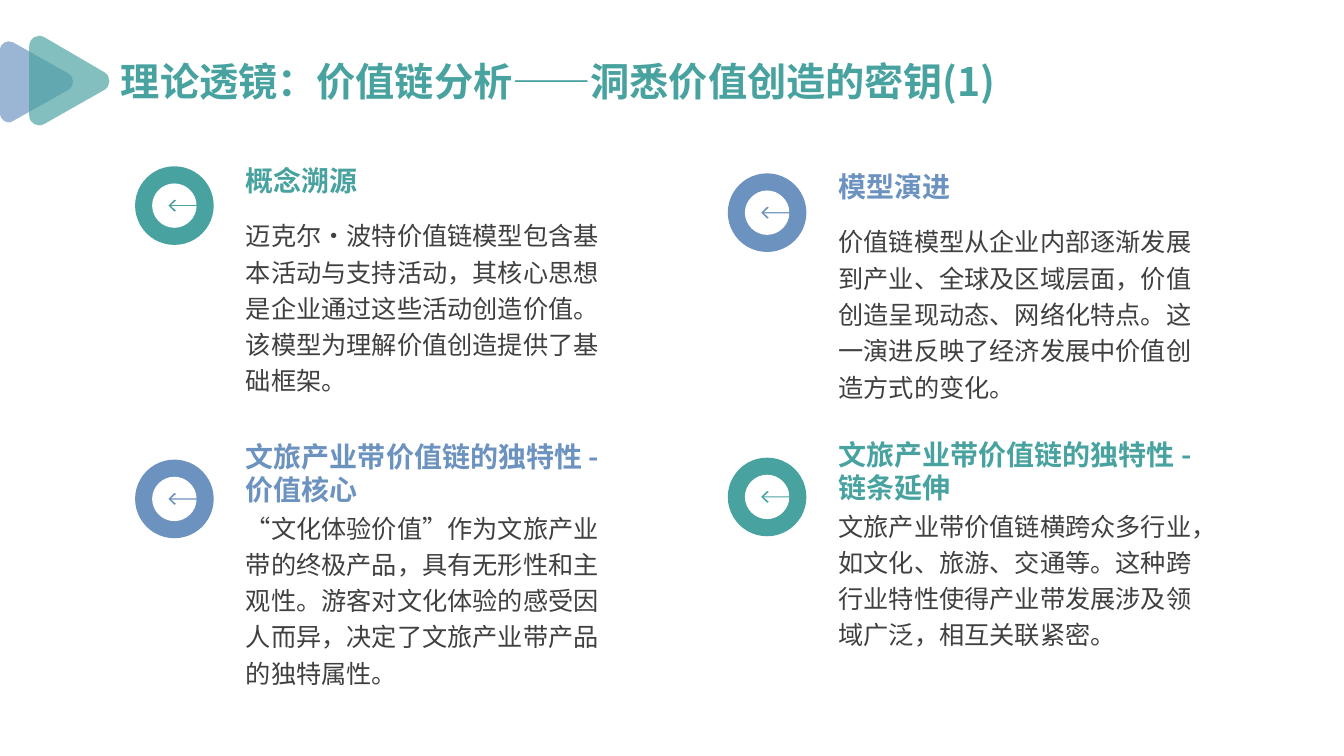
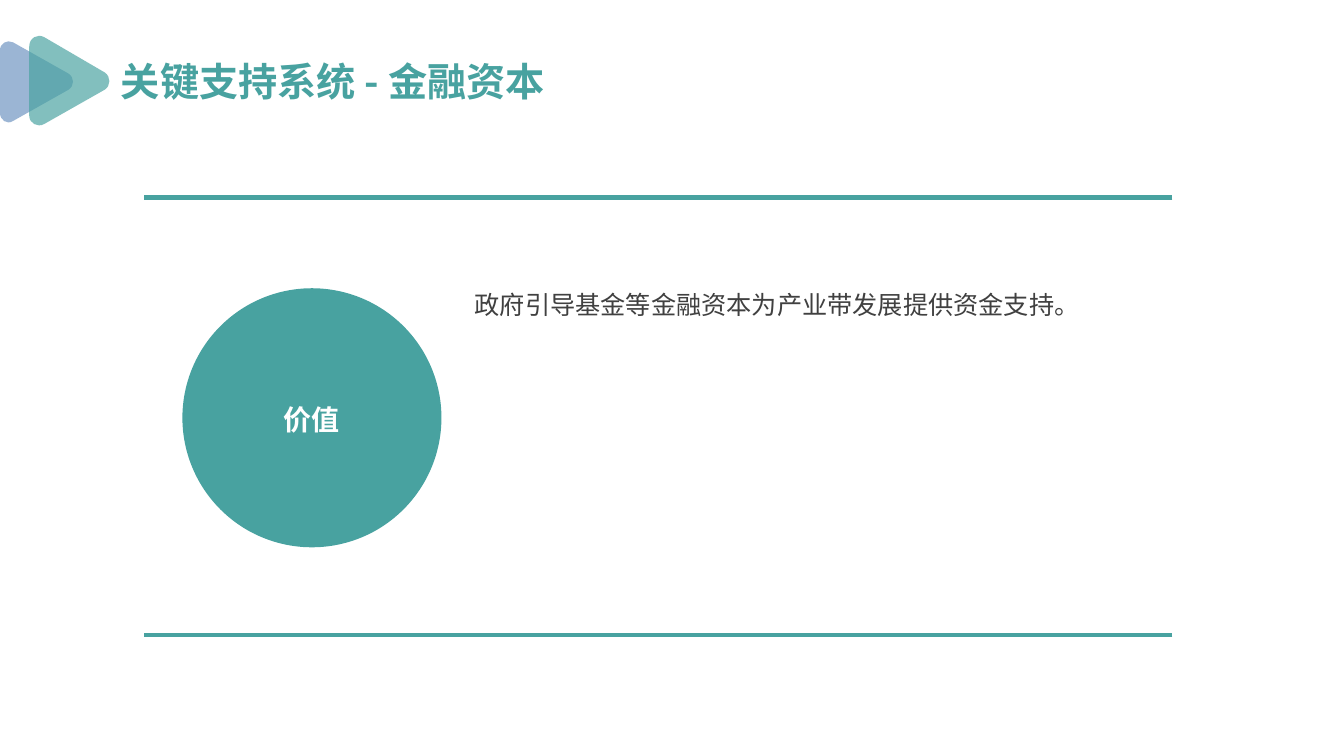
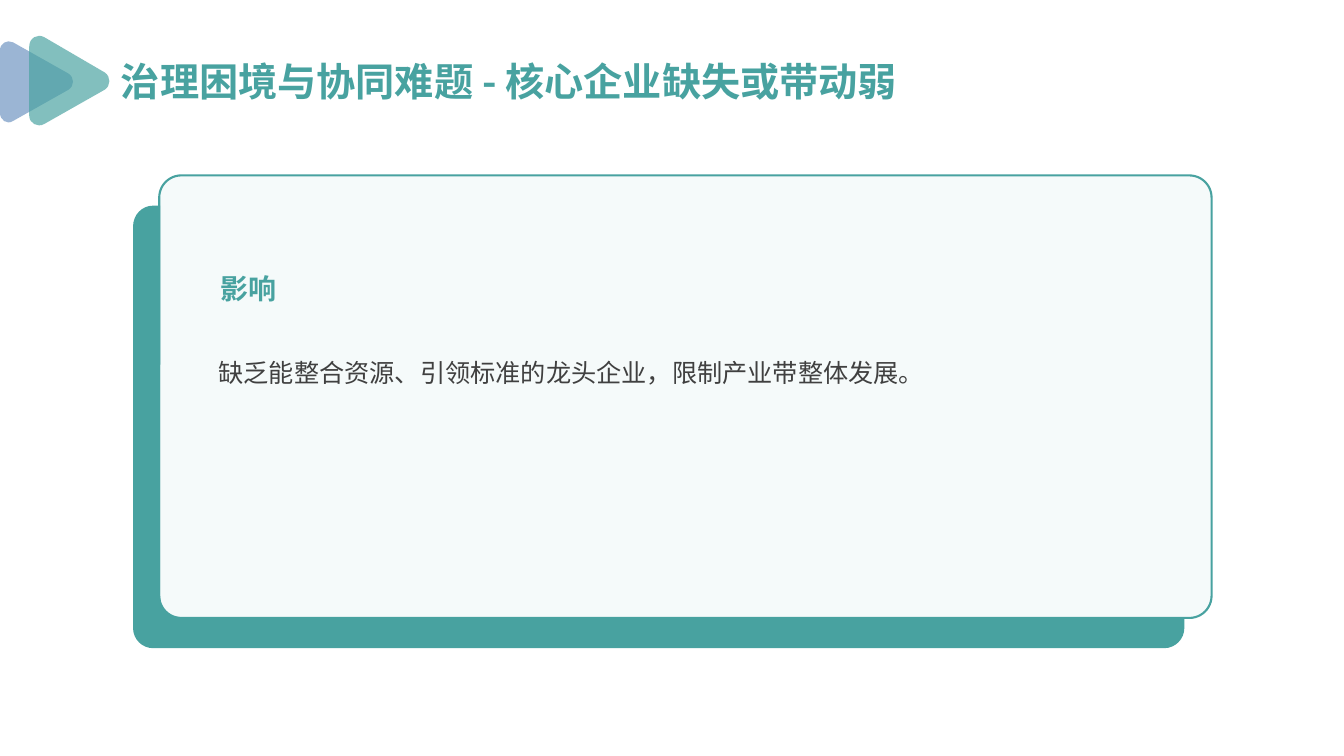
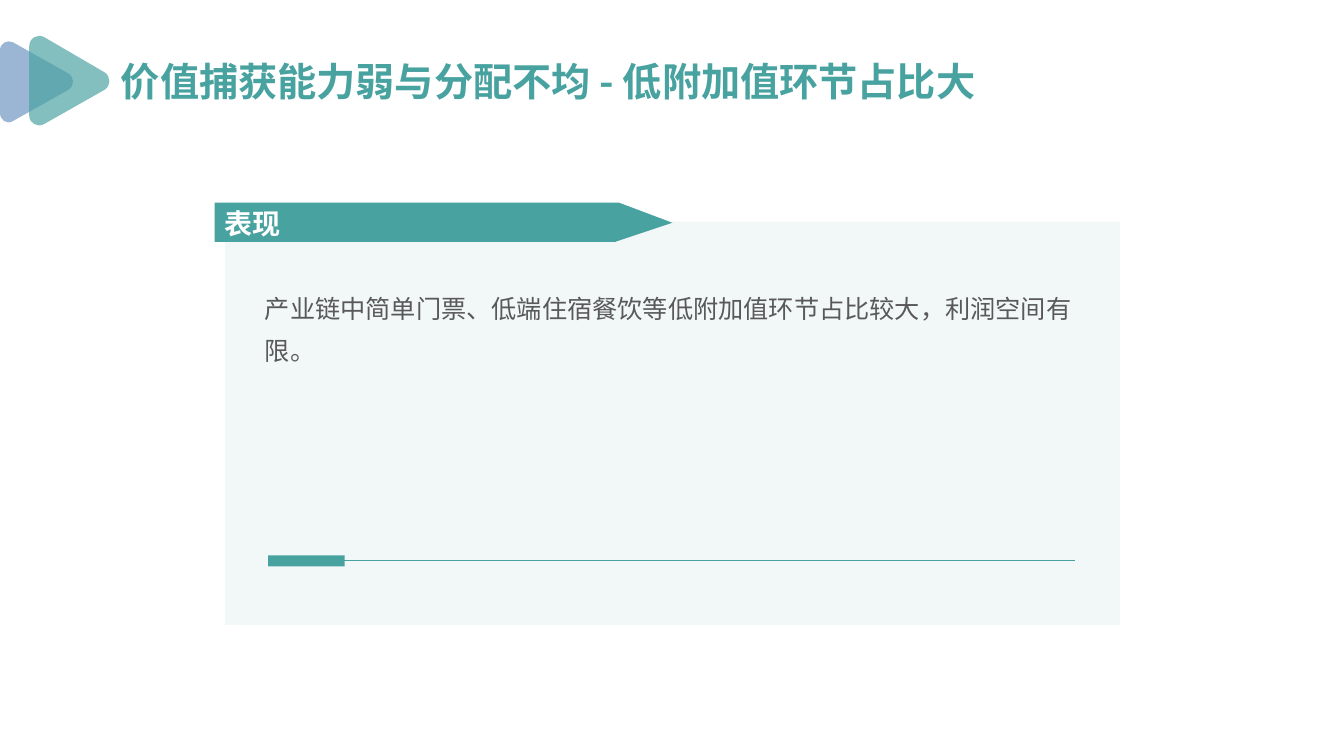
from pptx import Presentation
from pptx import util as u
from pptx.dml.color import RGBColor
from pptx.enum import shapes, text
from pptx.oxml import ns
from lxml import etree

TEAL = RGBColor(0x48, 0xA2, 0xA0)
BLUE = RGBColor(0x6C, 0x92, 0xC0)
WHITE = RGBColor(0xFF, 0xFF, 0xFF)
DARK = RGBColor(0x40, 0x40, 0x40)
GREY = RGBColor(0x59, 0x59, 0x59)
FONT = "Noto Sans CJK SC"
PX = 9144
PAD = (10, 5)

TITLES = [
    "理论透镜：价值链分析——洞悉价值创造的密钥(1)",
    "关键支持系统 - 金融资本",
    "治理困境与协同难题 - 核心企业缺失或带动弱",
    "价值捕获能力弱与分配不均 - 低附加值环节占比大",
]
ITEMS = [
    (134, 165, 159, TEAL, "概念溯源",
     "迈克尔·波特价值链模型包含基本活动与支持活动，其核心思想是企业通过这些活动创造价值。该模型为理解价值创造提供了基础框架。"),
    (722, 172, 165, BLUE, "模型演进",
     "价值链模型从企业内部逐渐发展到产业、全球及区域层面，价值创造呈现动态、网络化特点。这一演进反映了经济发展中价值创造方式的变化。"),
    (134, 456, 449, BLUE, "文旅产业带价值链的独特性 - 价值核心",
     "“文化体验价值”作为文旅产业带的终极产品，具有无形性和主观性。游客对文化体验的感受因人而异，决定了文旅产业带产品的独特属性。"),
    (722, 454, 447, TEAL, "文旅产业带价值链的独特性 - 链条延伸",
     "文旅产业带价值链横跨众多行业，如文化、旅游、交通等。这种跨行业特性使得产业带发展涉及领域广泛，相互关联紧密。"),
]
FUND = ("价值", "政府引导基金等金融资本为产业带发展提供资金支持。")
LEAD = ("影响", "缺乏能整合资源、引领标准的龙头企业，限制产业带整体发展。")
SHARE = ("表现", "产业链中简单门票、低端住宿餐饮等低附加值环节占比较大，利润空间有限。")

MARKS = [
    (BLUE, [(68, 73), (13, 42, 13, 42, 13, 42), (7, 39, 0, 43, 0, 50),
            (0, 112, 0, 112, 0, 112), (0, 119, 7, 124, 13, 120),
            (68, 89, 68, 89, 68, 89), (74, 85, 74, 77, 68, 73)]),
    (TEAL, [(104, 72), (44, 37, 44, 37, 44, 37), (37, 33, 29, 38, 29, 46),
            (29, 115, 29, 115, 29, 115), (29, 122, 37, 127, 44, 123),
            (104, 89, 104, 89, 104, 89), (110, 85, 110, 76, 104, 72)]),
]
EDGE = [(152, 204), (159, 204), (159, 593), (159, 604, 168, 613, 179, 613),
        (1175, 613), (1175, 623), (1175, 634, 1166, 643, 1155, 643), (152, 643),
        (141, 643, 132, 634, 132, 623), (132, 225), (132, 213, 141, 204, 152, 204)]
FLAG = [(213, 201), (614, 201), (667, 221), (610, 240), (611, 240), (213, 240)]
DISC = [(0, 22), (-12, 22, -22, 12, -22, 0), (-22, -12, -12, -22, 0, -22),
        (12, -22, 22, -12, 22, -0.6), (-3, -0.6), (2, -5), (0, -6), (-6, 0),
        (0, 6), (2, 5), (-3, 0.6), (22, 0.6), (22, 12, 12, 22, 0, 22)]


def emu(*vals):
    return [u.Emu(round(v * PX)) for v in vals]


def paint(shape, color, alpha=None):
    shape.shadow.inherit = False
    shape.fill.solid()
    shape.fill.fore_color.rgb = color
    shape.line.fill.background()
    if alpha:
        tone = shape.fill._xPr.find(".//" + ns.qn("a:srgbClr"))
        etree.SubElement(tone, ns.qn("a:alpha"), val=str(alpha * 1000))
    return shape


def block(slide, kind, box, color, alpha=None):
    return paint(slide.shapes.add_shape(kind, *emu(*box)), color, alpha)


def outline(host, segs, color, alpha=None, at=(0, 0)):
    pts = [tuple(emu(s[i] + at[0], s[i + 1] + at[1]))
           for s in segs for i in range(0, len(s), 2)]
    pen = host.shapes.build_freeform(*pts[0])
    pen.add_line_segments(pts[1:], close=True)
    shape = pen.convert_to_shape()
    steps = iter(list(shape._element.iter(ns.qn("a:lnTo"))))
    for seg in segs[1:]:
        step = next(steps)
        if len(seg) == 6:
            bend = etree.Element(ns.qn("a:cubicBezTo"))
            step.addprevious(bend)
            for part in (step, next(steps), next(steps)):
                bend.append(part[0])
                part.getparent().remove(part)
    return paint(shape, color, alpha)


def line(slide, start, end, width):
    rule = slide.shapes.add_connector(shapes.MSO_CONNECTOR.STRAIGHT, *emu(*start, *end))
    rule.line.color.rgb = TEAL
    rule.line.width = u.Pt(width)
    etree.SubElement(rule._element.spPr, ns.qn("a:effectLst"))


def write(shape, words, size, color, bold=False, space=None, mid=False,
          align=text.PP_ALIGN.LEFT, pad=PAD):
    frame = shape.text_frame
    frame.word_wrap = True
    frame.auto_size = text.MSO_AUTO_SIZE.NONE
    frame.vertical_anchor = text.MSO_ANCHOR.MIDDLE if mid else text.MSO_ANCHOR.TOP
    frame.margin_left = frame.margin_right = emu(pad[0])[0]
    frame.margin_top = frame.margin_bottom = emu(pad[1])[0]
    para = frame.paragraphs[0]
    para.alignment = align
    if space:
        para.line_spacing = space
    run = para.add_run()
    run.text = words
    font = run.font
    font.size, font.bold, font.name = u.Pt(size), bold, FONT
    font.color.rgb = color
    etree.SubElement(run._r.rPr, ns.qn("a:ea"), typeface=FONT)


def label(slide, box, *args, **opts):
    write(slide.shapes.add_textbox(*emu(*box)), *args, **opts)


def head(deck, title):
    slide = deck.slides.add_slide(deck.slide_layouts[5])
    write(slide.shapes.title, title, 28, TEAL, True)
    group = slide.shapes.add_group_shape()
    for color, segs in MARKS:
        outline(group, segs, color, 68)
    return slide


def lens(slide):
    for x, y, top, color, name, body in ITEMS:
        label(slide, (x + 100, top + 49, 371, 122), body, 18, DARK, space=1.2)
        label(slide, (x + 100, top, 392, 40), name, 20, color, True, mid=True)
        block(slide, shapes.MSO_SHAPE.OVAL, (x, y, 78, 78), color)
        outline(slide, DISC, WHITE, at=(x + 39, y + 39))


def fund(slide):
    name, body = FUND
    for y in (196, 630):
        line(slide, (1163, y), (143, y), 3)
    block(slide, shapes.MSO_SHAPE.OVAL, (181, 286, 257, 257), TEAL)
    label(slide, (175, 396, 269, 40), name, 20, WHITE, True, mid=True,
          align=text.PP_ALIGN.CENTER)
    label(slide, (471, 275, 646, 280), body, 18, DARK, space=1.4, pad=(0, 0))


def lead(slide):
    name, body = LEAD
    card = block(slide, shapes.MSO_SHAPE.ROUNDED_RECTANGLE, (158, 174, 1044, 439), TEAL, 5)
    card.adjustments[0] = 0.05
    card.line.color.rgb = TEAL
    card.line.width = u.Pt(1.5)
    outline(slide, EDGE, TEAL)
    label(slide, (219, 271, 946, 30), name, 20, TEAL, True, mid=True, pad=(0, 0))
    label(slide, (207, 338, 951, 184), body, 18, DARK, space=1.4)


def share(slide):
    name, body = SHARE
    block(slide, shapes.MSO_SHAPE.RECTANGLE, (223, 220, 888, 400), TEAL, 7)
    outline(slide, FLAG, TEAL)
    label(slide, (253, 274, 827, 219), body, 18, GREY, space=1.4)
    block(slide, shapes.MSO_SHAPE.RECTANGLE, (266, 551, 76, 11), TEAL)
    line(slide, (1066, 556), (321, 556), 1)
    label(slide, (213, 200, 408, 44), name, 20, WHITE, True)


def main():
    deck = Presentation()
    deck.slide_width, deck.slide_height = emu(1333.33, 750)
    title = deck.slide_layouts[5].placeholders[0]
    title.left, title.top, title.width, title.height = emu(110, 52, 1182, 57)
    for words, fill in zip(TITLES, (lens, fund, lead, share)):
        fill(head(deck, words))
    deck.save("out.pptx")


if __name__ == "__main__":
    main()
